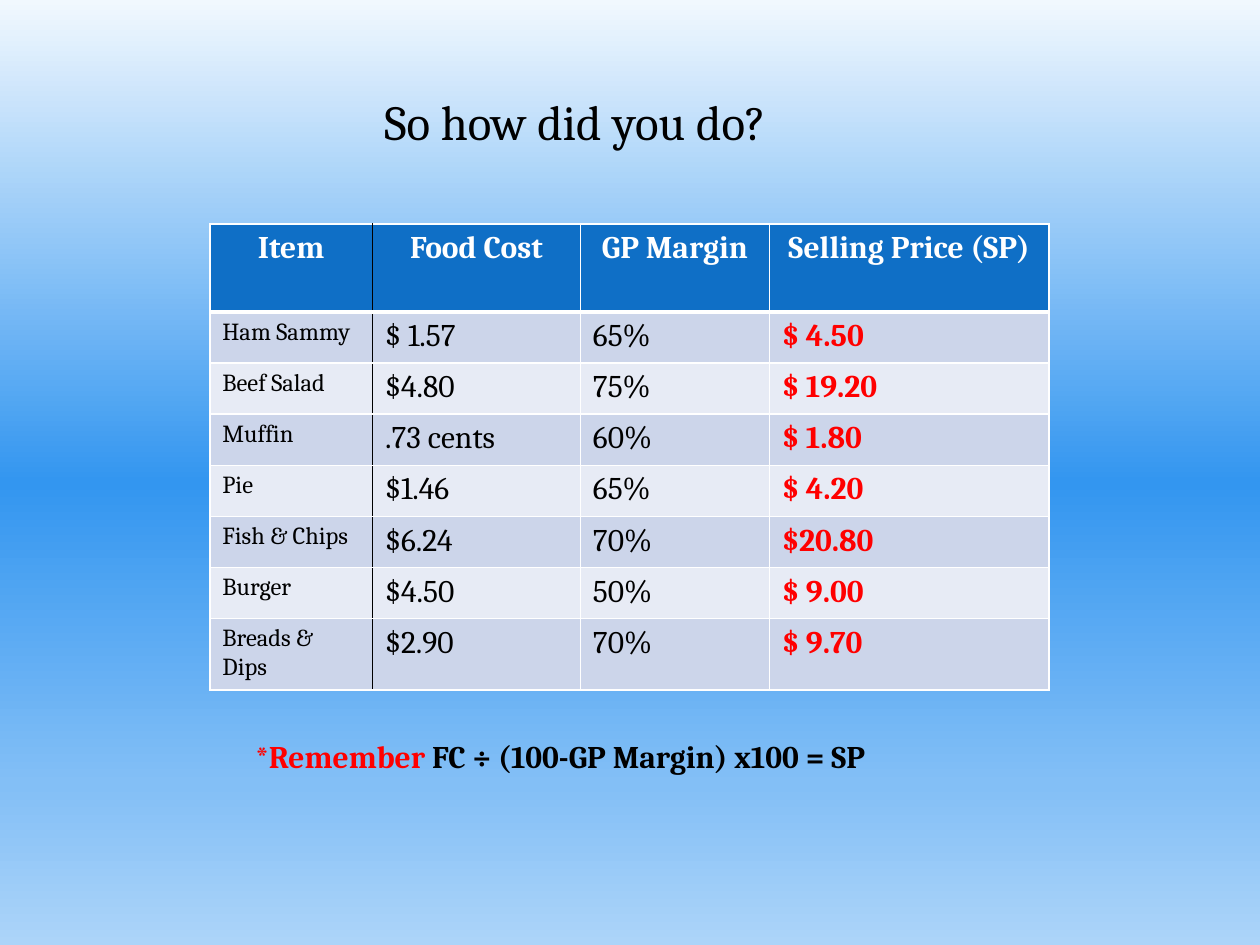
import pptx
import pptx.dml.color
import pptx.enum.text
import pptx.oxml.ns
import pptx.util
from lxml import etree
from pptx.util import Cm

qn = pptx.oxml.ns.qn
BLACK, WHITE, RED = "000000", "FFFFFF", "FF0000"


def color(value):
    return pptx.dml.color.RGBColor.from_string(value)


def style(run, size, value, bold=False):
    run.font.name = "Cambria"
    run.font.size = pptx.util.Pt(size)
    run.font.color.rgb = color(value)
    run.font.bold = bold


deck = pptx.Presentation()
deck.slide_width, deck.slide_height = Cm(25.4), Cm(19.05)
slide = deck.slides.add_slide(deck.slide_layouts[6])

# Sky-blue background running from top to bottom
sky = slide.background.fill
sky.gradient()
sky.gradient_angle = 270
stops = next(slide.element.iter(qn("a:gsLst")))
for stop in list(stops):
    stops.remove(stop)
for percent, value in [(0, "F1F8FE"), (51, "3396F0"), (83, "83BFF6"), (100, "ACD4F9")]:
    stop = etree.SubElement(stops, qn("a:gs"), pos=str(percent * 1000))
    etree.SubElement(stop, qn("a:srgbClr"), val=value)

# Title and reminder
captions = [
    (7.5, 1.73, 8.76, 1.45, 28, [("So how did you do?", BLACK, False)]),
    (4.9, 14.73, 13.46, 1.02, 18, [
        ("*", RED, False),
        ("Remember ", RED, True),
        ("FC ÷ (100-GP Margin) x100 = SP", BLACK, True),
    ]),
]
for left, top, width, height, size, parts in captions:
    caption = slide.shapes.add_textbox(Cm(left), Cm(top), Cm(width), Cm(height))
    caption.text_frame.word_wrap = False
    caption.text_frame.auto_size = pptx.enum.text.MSO_AUTO_SIZE.SHAPE_TO_FIT_TEXT
    for text, value, bold in parts:
        run = caption.text_frame.paragraphs[0].add_run()
        run.text = text
        style(run, size, value, bold)

# Price table
prices = [
    ("Item", "Food Cost", "GP Margin", "Selling Price (SP)"),
    ("Ham Sammy", "$ 1.57", "65%", "$ 4.50"),
    ("Beef Salad", "$4.80", "75%", "$ 19.20"),
    ("Muffin", ".73 cents", "60%", "$ 1.80"),
    ("Pie", "$1.46", "65%", "$ 4.20"),
    ("Fish & Chips", "$6.24", "70%", "$20.80"),
    ("Burger", "$4.50", "50%", "$ 9.00"),
    ("Breads & Dips", "$2.90", "70%", "$ 9.70"),
]
column_widths = [3.28, 4.19, 3.81, 5.64]
row_heights = [1.77] + [1.03] * 6 + [1.43]
price_table = slide.shapes.add_table(
    len(prices), len(column_widths), Cm(4.23), Cm(4.52),
    Cm(sum(column_widths)), Cm(sum(row_heights))).table
for column, width in zip(price_table.columns, column_widths):
    column.width = Cm(width)
for row, height in zip(price_table.rows, row_heights):
    row.height = Cm(height)

body_styles = [(14, BLACK, False), (18, BLACK, False), (18, BLACK, False), (18, RED, True)]
for r, entries in enumerate(prices):
    for c, entry in enumerate(entries):
        cell = price_table.cell(r, c)
        cell.text_frame.text = entry
        paragraph = cell.text_frame.paragraphs[0]
        cell.fill.solid()
        if r == 0:
            paragraph.alignment = pptx.enum.text.PP_ALIGN.CENTER
            style(paragraph.runs[0], 18, WHITE, True)
            cell.fill.fore_color.rgb = color("0F6FC6")
        else:
            style(paragraph.runs[0], *body_styles[c])
            cell.fill.fore_color.rgb = color("CCD5EA" if r % 2 else "E7EBF5")

        # A black rule divides the items from their figures
        borders = [
            ("a:lnL", BLACK if c == 1 else WHITE, 1),
            ("a:lnR", BLACK if c == 0 else WHITE, 1),
            ("a:lnT", WHITE, 3 if r == 1 else 1),
            ("a:lnB", WHITE, 3 if r == 0 else 1),
        ]
        properties = cell._tc.get_or_add_tcPr()
        for position, (side, value, points) in enumerate(borders):
            line = etree.Element(qn(side), w=str(pptx.util.Pt(points)))
            fill = etree.SubElement(line, qn("a:solidFill"))
            etree.SubElement(fill, qn("a:srgbClr"), val=value)
            properties.insert(position, line)

deck.save("out.pptx")
